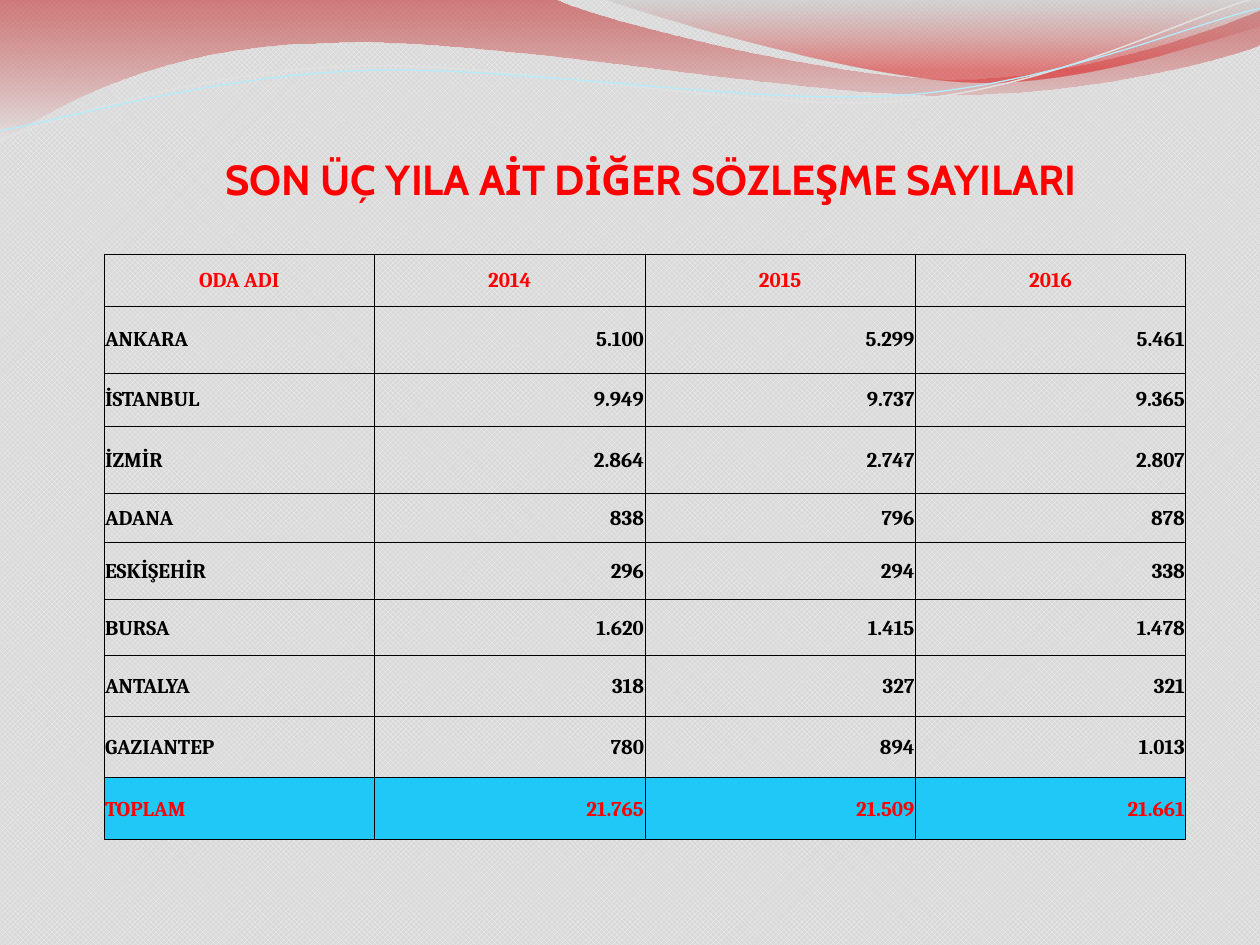
from lxml import etree
from pptx import Presentation
from pptx.dml.color import RGBColor
from pptx.enum.dml import MSO_PATTERN
from pptx.enum.text import MSO_ANCHOR, MSO_AUTO_SIZE, PP_ALIGN
from pptx.oxml.ns import qn
from pptx.util import Emu, Pt

TRELLIS = MSO_PATTERN.TRELLIS
MIDDLE, BOTTOM = MSO_ANCHOR.MIDDLE, MSO_ANCHOR.BOTTOM
NO_AUTOFIT = MSO_AUTO_SIZE.NONE
LEFT, CENTER, RIGHT = PP_ALIGN.LEFT, PP_ALIGN.CENTER, PP_ALIGN.RIGHT

PX = 914400 / 126
TITLE_FONT, TABLE_FONT = "Cabin", "Cambria"
COLORS = {
    "dots": "F2F2F2", "ground": "D9D9D9", "red": "FF0000", "black": "000000",
    "total": "20C8F7", "crimson": "BD0000", "mist": "E7E7E7",
    "silver": "BDBDBD", "scarlet": "E10000", "pale": "E1E1E1", "aqua": "B4ECFC",
}

# A wave is a start point and its segments: 2 numbers for a line, 6 for a Bézier.
BANDS = [
    ((0, 0), [(554, -1), (600, 21, 837, 79, 955, 79), (1075, 79, 1207, 33, 1260, 11),
              (1261, 45), (1239, 55, 1096, 96, 940, 95), (784, 95, 481, 35, 324, 43),
              (163, 45, 58, 105, -1, 142), (0, 0)],
     [(0, "crimson", 45), (1, "mist", 55)]),
    ((604, -1), [(641, 14, 859, 78, 969, 82), (1079, 87, 1211, 40, 1260, 26),
                 (1260, 0), (604, -1)],
     [(0, "silver", 30), (0.8, "scarlet", 45)]),
]
STRAND_TILT = 357.3
STRANDS = [
    ((-2, 110), [(59, 90, 200, 52, 350, 53), (499, 53, 745, 118, 896, 114),
                 (1049, 109, 1184, 45, 1260, 27)], "pale", 0.85),
    ((-2, 101), [(57, 94, 207, 57, 358, 58), (509, 58, 750, 112, 902, 108),
                 (1052, 104, 1188, 52, 1262, 38)], "aqua", 0.75),
]

TITLE = "SON ÜÇ YILA AİT DİĞER SÖZLEŞME SAYILARI"
CONTRACTS = [
    ("ODA ADI", "2014", "2015", "2016"),
    ("ANKARA", "5.100", "5.299", "5.461"),
    ("İSTANBUL", "9.949", "9.737", "9.365"),
    ("İZMİR", "2.864", "2.747", "2.807"),
    ("ADANA", "838", "796", "878"),
    ("ESKİŞEHİR", "296", "294", "338"),
    ("BURSA", "1.620", "1.415", "1.478"),
    ("ANTALYA", "318", "327", "321"),
    ("GAZIANTEP", "780", "894", "1.013"),
    ("TOPLAM", "21.765", "21.509", "21.661"),
]
ROW_HEIGHTS = [52, 67, 53, 68, 49, 57, 56, 61, 61, 62]


def px(length):
    return Emu(round(length * PX))


def rgb(name):
    return RGBColor.from_string(COLORS[name])


def format_text(paragraph, font_name, size, color, align):
    paragraph.alignment = align
    for run in paragraph.runs:
        run.font.name = font_name
        run.font.size = Pt(size)
        run.font.bold = True
        run.font.color.rgb = rgb(color)


def bend_segments(wave, segments):
    """Turn each run of three lines that stands for a Bézier into one curve."""
    lines = iter(list(wave._element.iter(qn("a:lnTo"))))
    for segment in segments:
        steps = [next(lines) for _ in range(len(segment) // 2)]
        if len(steps) == 3:
            curve = etree.Element(qn("a:cubicBezTo"))
            steps[0].addprevious(curve)
            for step in steps:
                curve.append(step[0])
                step.getparent().remove(step)


def add_wave(slide, left, top, start, segments, closed):
    points = [start]
    for segment in segments:
        points += zip(segment[::2], segment[1::2])
    corners = [(px(left + x), px(top + y)) for x, y in points]
    builder = slide.shapes.build_freeform(*corners[0])
    builder.add_line_segments(corners[1:], close=closed)
    wave = builder.convert_to_shape()
    wave.shadow.inherit = False
    bend_segments(wave, segments)
    return wave


def add_waves(slide, left, top):
    for start, segments, stops in BANDS:
        band = add_wave(slide, left, top, start, segments, True)
        band.line.fill.background()
        band.fill.gradient()
        band.fill.gradient_angle = 270
        for stop, (position, color, _) in zip(band.fill.gradient_stops, stops):
            stop.position = position
            stop.color.rgb = rgb(color)
        tints = band._element.spPr.iter(qn("a:srgbClr"))
        for tint, (_, _, opacity) in zip(tints, stops):
            etree.SubElement(tint, qn("a:alpha")).set("val", str(opacity * 1000))
    for start, segments, color, width in STRANDS:
        strand = add_wave(slide, left, top, start, segments, False)
        strand.rotation = STRAND_TILT
        strand.fill.background()
        strand.line.color.rgb = rgb(color)
        strand.line.width = Pt(width)


def place_title(slide, left, top, width, height):
    title = slide.shapes.title
    title.left, title.top, title.width, title.height = map(px, (left, top, width, height))
    frame = title.text_frame
    frame.text = TITLE
    frame.word_wrap = True
    frame.auto_size = NO_AUTOFIT
    frame.vertical_anchor = BOTTOM
    frame.margin_left = frame.margin_right = 0
    frame.margin_top, frame.margin_bottom = px(6), px(50)
    format_text(frame.paragraphs[0], TITLE_FONT, 24, "red", CENTER)


def add_borders(cell, color, width):
    properties = cell._tc.get_or_add_tcPr()
    for side in ("a:lnL", "a:lnR", "a:lnT", "a:lnB"):
        border = etree.SubElement(properties, qn(side), w=str(Pt(width)))
        fill = etree.SubElement(border, qn("a:solidFill"))
        etree.SubElement(fill, qn("a:srgbClr"), val=COLORS[color])


def add_contract_table(slide, left, top, width, height):
    box = map(px, (left, top, width, height))
    table = slide.shapes.add_table(len(CONTRACTS), len(CONTRACTS[0]), *box).table
    table.first_row = table.horz_banding = False
    last = len(CONTRACTS) - 1
    for row, (values, row_height) in enumerate(zip(CONTRACTS, ROW_HEIGHTS)):
        table.rows[row].height = px(row_height)
        for column, value in enumerate(values):
            cell = table.cell(row, column)
            cell.text_frame.text = value
            cell.vertical_anchor = MIDDLE
            cell.margin_left = cell.margin_right = cell.margin_top = px(1)
            cell.margin_bottom = 0
            add_borders(cell, "black", 0.5)
            if row == last:
                cell.fill.solid()
                cell.fill.fore_color.rgb = rgb("total")
            else:
                cell.fill.background()
            align = CENTER if row == 0 else RIGHT if column else LEFT
            color = "red" if row in (0, last) else "black"
            format_text(cell.text_frame.paragraphs[0], TABLE_FONT, 12, color, align)


def main():
    deck = Presentation()
    deck.slide_width, deck.slide_height = px(1260), px(945)
    slide = deck.slides.add_slide(deck.slide_layouts[5])
    ground = slide.background.fill
    ground.patterned()
    ground.pattern = TRELLIS
    ground.fore_color.rgb = rgb("dots")
    ground.back_color.rgb = rgb("ground")
    add_waves(slide, 0, 0)
    place_title(slide, 84, 116, 1134, 138)
    add_contract_table(slide, 104, 254, 1082, sum(ROW_HEIGHTS))
    deck.save("out.pptx")


if __name__ == "__main__":
    main()
